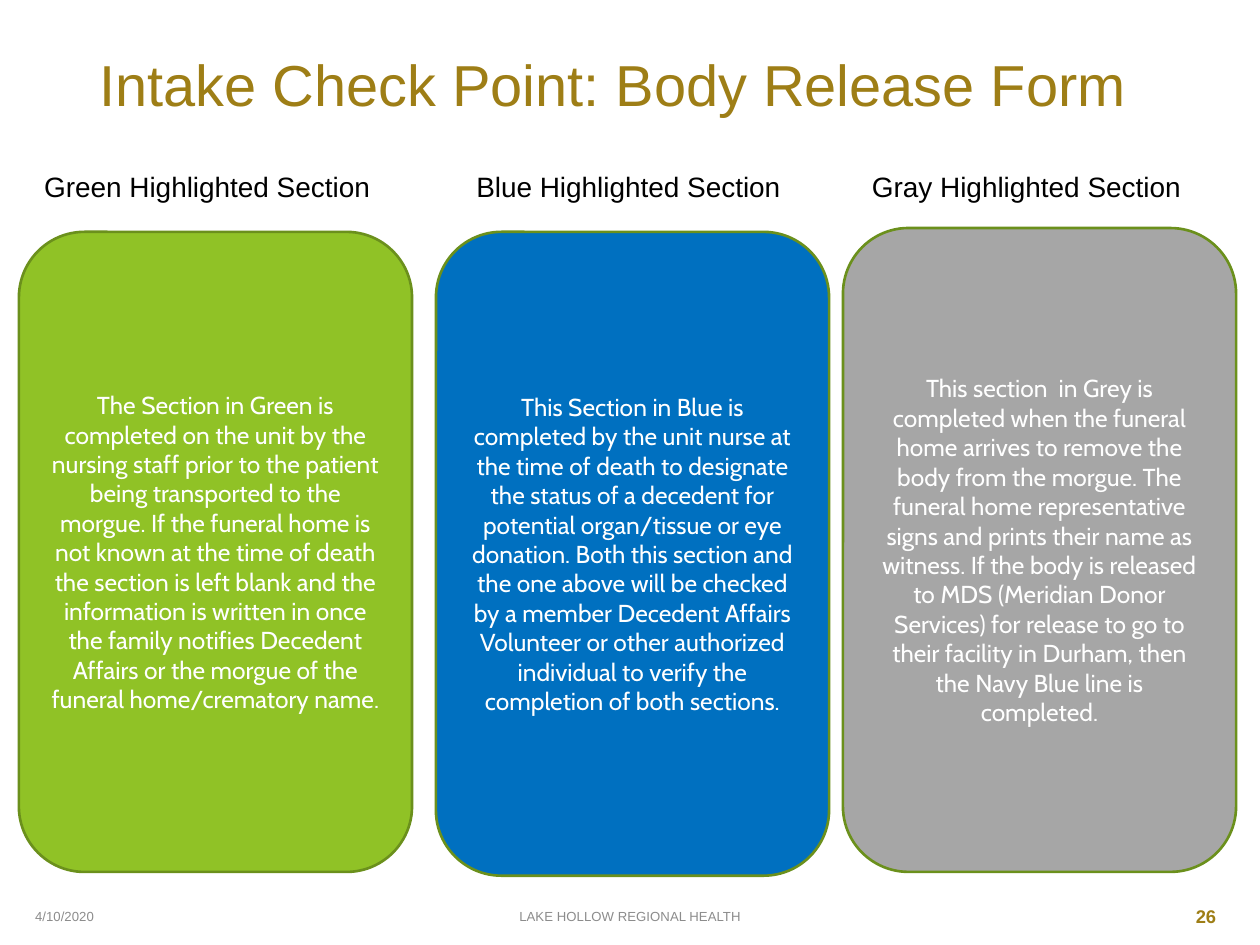
from dataclasses import dataclass

from lxml.etree import SubElement
from pptx import Presentation
from pptx.dml.color import RGBColor
from pptx.enum.shapes import MSO_SHAPE
from pptx.enum.text import MSO_ANCHOR, PP_ALIGN
from pptx.oxml.ns import qn
from pptx.shapes.autoshape import Shape
from pptx.slide import Slide
from pptx.util import Inches, Pt

GOLD = RGBColor(0x9E, 0x7E, 0x16)
BLACK = RGBColor(0x00, 0x00, 0x00)
FOOTER_GRAY = RGBColor(0x8C, 0x8C, 0x8C)
WHITE = RGBColor(0xFF, 0xFF, 0xFF)
OUTLINE = RGBColor(0x6B, 0x90, 0x1C)
GREEN = RGBColor(0x90, 0xC2, 0x26)
BLUE = RGBColor(0x00, 0x70, 0xC0)
GRAY = RGBColor(0xA6, 0xA6, 0xA6)

PANEL_WIDTH = 3.12
HEADING_TABS = (3.43, 6.57)


@dataclass(frozen=True)
class Section:
    heading: str
    body: str
    fill: RGBColor
    left: float
    top: float
    height: float


@dataclass(frozen=True)
class FooterItem:
    text: str
    left: float
    width: float
    align: PP_ALIGN
    size: float = 7.5
    color: RGBColor = FOOTER_GRAY
    bold: bool = False


SECTIONS = (
    Section(
        "Green Highlighted Section",
        "The Section in Green is completed on the unit by the nursing staff prior to "
        "the patient being transported to the morgue. If the funeral home is not known "
        "at the time of death the section is left blank and the information is written "
        "in once the family notifies Decedent Affairs or the morgue of the funeral "
        "home/crematory name.",
        GREEN, 0.15, 1.84, 5.08,
    ),
    Section(
        "Blue Highlighted Section",
        "This Section in Blue is completed by the unit nurse at the time of death to "
        "designate the status of a decedent for potential organ/tissue or eye donation. "
        "Both this section and the one above will be checked by a member Decedent "
        "Affairs Volunteer or other authorized individual to verify the completion of "
        "both sections.",
        BLUE, 3.46, 1.84, 5.11,
    ),
    Section(
        "Gray Highlighted Section",
        "This section  in Grey is completed when the funeral home arrives to remove the "
        "body from the morgue. The funeral home representative signs and prints their "
        "name as witness. If the body is released to MDS (Meridian Donor Services) for "
        "release to go to their facility in Durham, then the Navy Blue line is completed.",
        GRAY, 6.69, 1.81, 5.11,
    ),
)

FOOTER = (
    FooterItem("4/10/2020", 0.18, 2.25, PP_ALIGN.LEFT),
    FooterItem("LAKE HOLLOW REGIONAL HEALTH", 3.31, 3.38, PP_ALIGN.CENTER),
    FooterItem("26", 7.5, 2.25, PP_ALIGN.RIGHT, 10.5, GOLD, True),
)


def write_text(
    shape: Shape,
    text: str,
    *,
    size: float,
    color: RGBColor,
    font: str = "Arial",
    bold: bool = False,
    align: PP_ALIGN = PP_ALIGN.LEFT,
    anchor: MSO_ANCHOR = MSO_ANCHOR.MIDDLE,
    line_spacing: float = 1.0,
    tabs: tuple[float, ...] = (),
) -> None:
    frame = shape.text_frame
    frame.word_wrap = True
    frame.vertical_anchor = anchor
    paragraph = frame.paragraphs[0]
    paragraph.text = text
    paragraph.alignment = align
    paragraph.line_spacing = line_spacing
    if tabs:
        tab_list = SubElement(paragraph._p.get_or_add_pPr(), qn("a:tabLst"))
        for position in tabs:
            SubElement(tab_list, qn("a:tab"), pos=str(Inches(position)), algn="l")
    for run in paragraph.runs:
        run.font.name = font
        run.font.size = Pt(size)
        run.font.bold = bold
        run.font.color.rgb = color


def add_box(slide: Slide, left: float, top: float, width: float, height: float) -> Shape:
    return slide.shapes.add_textbox(
        Inches(left), Inches(top), Inches(width), Inches(height)
    )


def add_section(slide: Slide, section: Section) -> None:
    panel = slide.shapes.add_shape(
        MSO_SHAPE.ROUNDED_RECTANGLE,
        Inches(section.left), Inches(section.top),
        Inches(PANEL_WIDTH), Inches(section.height),
    )
    panel.shadow.inherit = False
    panel.fill.solid()
    panel.fill.fore_color.rgb = section.fill
    panel.line.color.rgb = OUTLINE
    panel.line.width = Pt(1.5)
    write_text(panel, section.body, size=14, color=WHITE, font="Cabin",
               align=PP_ALIGN.CENTER)


def add_footer_item(slide: Slide, item: FooterItem) -> None:
    box = add_box(slide, item.left, 7.07, item.width, 0.4)
    write_text(box, item.text, size=item.size, color=item.color, bold=item.bold,
               align=item.align)


def main() -> None:
    presentation = Presentation()
    presentation.slide_width = Inches(10)
    presentation.slide_height = Inches(7.5)
    slide = presentation.slides.add_slide(presentation.slide_layouts[6])

    title = add_box(slide, 0.69, 0.4, 8.62, 0.98)
    write_text(title, "Intake Check Point: Body Release Form", size=33, color=GOLD,
               anchor=MSO_ANCHOR.TOP, line_spacing=0.9)

    headings = add_box(slide, 0.18, 1.28, 9.58, 0.4)
    headings.text_frame.margin_left = Inches(0.17)
    write_text(headings, "\t".join(section.heading for section in SECTIONS),
               size=16, color=BLACK, tabs=HEADING_TABS)

    for item in FOOTER:
        add_footer_item(slide, item)
    for section in SECTIONS:
        add_section(slide, section)

    presentation.save("out.pptx")


if __name__ == "__main__":
    main()
